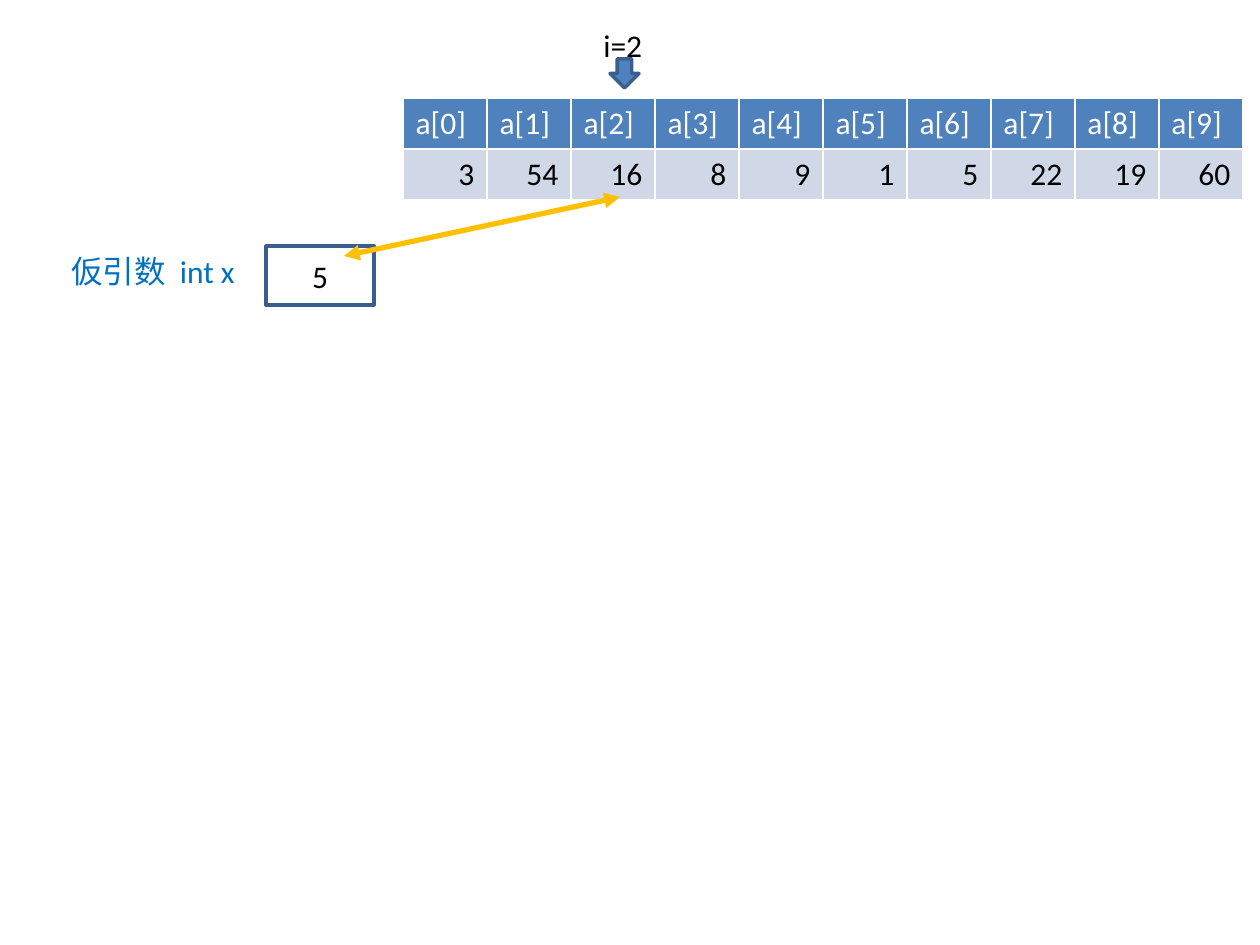
from lxml import etree
from pptx import Presentation
from pptx.dml.color import RGBColor
from pptx.enum.shapes import MSO_CONNECTOR, MSO_SHAPE
from pptx.enum.text import MSO_ANCHOR, PP_ALIGN
from pptx.oxml.ns import qn
from pptx.util import Emu, Pt

LEFT, CENTER, RIGHT = PP_ALIGN.LEFT, PP_ALIGN.CENTER, PP_ALIGN.RIGHT
TOP, MIDDLE = MSO_ANCHOR.TOP, MSO_ANCHOR.MIDDLE
RECTANGLE, DOWN_ARROW = MSO_SHAPE.RECTANGLE, MSO_SHAPE.DOWN_ARROW
STRAIGHT = MSO_CONNECTOR.STRAIGHT

# Content
ARRAY_VALUES = [3, 54, 16, 8, 9, 1, 5, 22, 19, 60]
INDEX_TEXT = "i=2"
PARAMETER_TEXT = "仮引数  int x"
PARAMETER_VALUE = "5"

COLORS = {
    "header": "4F81BD", "body": "D0D8E8", "outline": "3A5F8C",
    "white": "FFFFFF", "black": "000000", "label": "0070C0", "link": "FFC000",
}
FONT, FONT_SIZE = "Calibri", 18

# Layout in px, 126 to the inch
SLIDE_SIZE = (1260, 945)
TABLE_LEFT, TABLE_TOP = 403, 98
COLUMN_WIDTH, ROW_HEIGHT = 84, 51
VALUE_BOX = (266, 246, 108, 59)
LABEL_BOX = (59, 246, 190, 50)
INDEX_ARROW = (610, 59, 29, 29)
INDEX_BOX = (591, 20, 64, 50)
LINK = (620, 197, 344, 256)


def px(value):
    return Emu(value * 914400 // 126)


def box(values):
    return [px(value) for value in values]


def color(name):
    return RGBColor.from_string(COLORS[name])


def write(text_frame, text, color_name, alignment=LEFT):
    paragraph = text_frame.paragraphs[0]
    paragraph.alignment = alignment
    run = paragraph.add_run()
    run.text = text
    run.font.name = FONT
    run.font.size = Pt(FONT_SIZE)
    run.font.bold = False
    run.font.color.rgb = color(color_name)


def add_borders(cell):
    properties = cell._tc.get_or_add_tcPr()
    for index, side in enumerate(("lnL", "lnR", "lnT", "lnB")):
        line = etree.Element(qn(f"a:{side}"), w=str(Pt(1)))
        fill = etree.SubElement(line, qn("a:solidFill"))
        etree.SubElement(fill, qn("a:srgbClr"), val=COLORS["white"])
        properties.insert(index, line)


def add_shape(slide, kind, bounds, fill, outline=None):
    shape = slide.shapes.add_shape(kind, *box(bounds))
    shape.shadow.inherit = False
    shape.fill.solid()
    shape.fill.fore_color.rgb = color(fill)
    if outline:
        shape.line.color.rgb = color(outline)
        shape.line.width = Pt(2)
    else:
        shape.line.fill.background()
    return shape


def add_array_table(slide):
    headers = [f"a[{index}]" for index in range(len(ARRAY_VALUES))]
    rows = [(headers, "header", "white", LEFT),
            (ARRAY_VALUES, "body", "black", RIGHT)]
    bounds = (TABLE_LEFT, TABLE_TOP,
              COLUMN_WIDTH * len(headers), ROW_HEIGHT * len(rows))
    table = slide.shapes.add_table(len(rows), len(headers), *box(bounds)).table
    for column in table.columns:
        column.width = px(COLUMN_WIDTH)
    for row_index, (values, fill, text_color, alignment) in enumerate(rows):
        table.rows[row_index].height = px(ROW_HEIGHT)
        for column_index, value in enumerate(values):
            cell = table.cell(row_index, column_index)
            cell.fill.solid()
            cell.fill.fore_color.rgb = color(fill)
            add_borders(cell)
            write(cell.text_frame, str(value), text_color, alignment)


def add_link(slide):
    connector = slide.shapes.add_connector(STRAIGHT, *box(LINK))
    connector.line.color.rgb = color("link")
    connector.line.width = Pt(3)
    line = connector.line._get_or_add_ln()
    for end in ("headEnd", "tailEnd"):
        etree.SubElement(line, qn(f"a:{end}"), type="triangle")
    etree.SubElement(connector._element.spPr, qn("a:effectLst"))


def main():
    presentation = Presentation()
    presentation.slide_width, presentation.slide_height = box(SLIDE_SIZE)
    slide = presentation.slides.add_slide(presentation.slide_layouts[6])

    add_array_table(slide)

    # Formal parameter and its value
    value_box = add_shape(slide, RECTANGLE, VALUE_BOX, "white", "outline")
    value_box.text_frame.vertical_anchor = MIDDLE
    write(value_box.text_frame, PARAMETER_VALUE, "black", CENTER)

    label = add_shape(slide, RECTANGLE, LABEL_BOX, "white")
    label.text_frame.word_wrap = True
    label.text_frame.vertical_anchor = TOP
    write(label.text_frame, PARAMETER_TEXT, "label")

    # Current index and the link from its element to the parameter
    add_shape(slide, DOWN_ARROW, INDEX_ARROW, "header", "outline")
    add_link(slide)
    index_label = slide.shapes.add_textbox(*box(INDEX_BOX))
    index_label.text_frame.word_wrap = False
    write(index_label.text_frame, INDEX_TEXT, "black")

    presentation.save("out.pptx")


if __name__ == "__main__":
    main()
